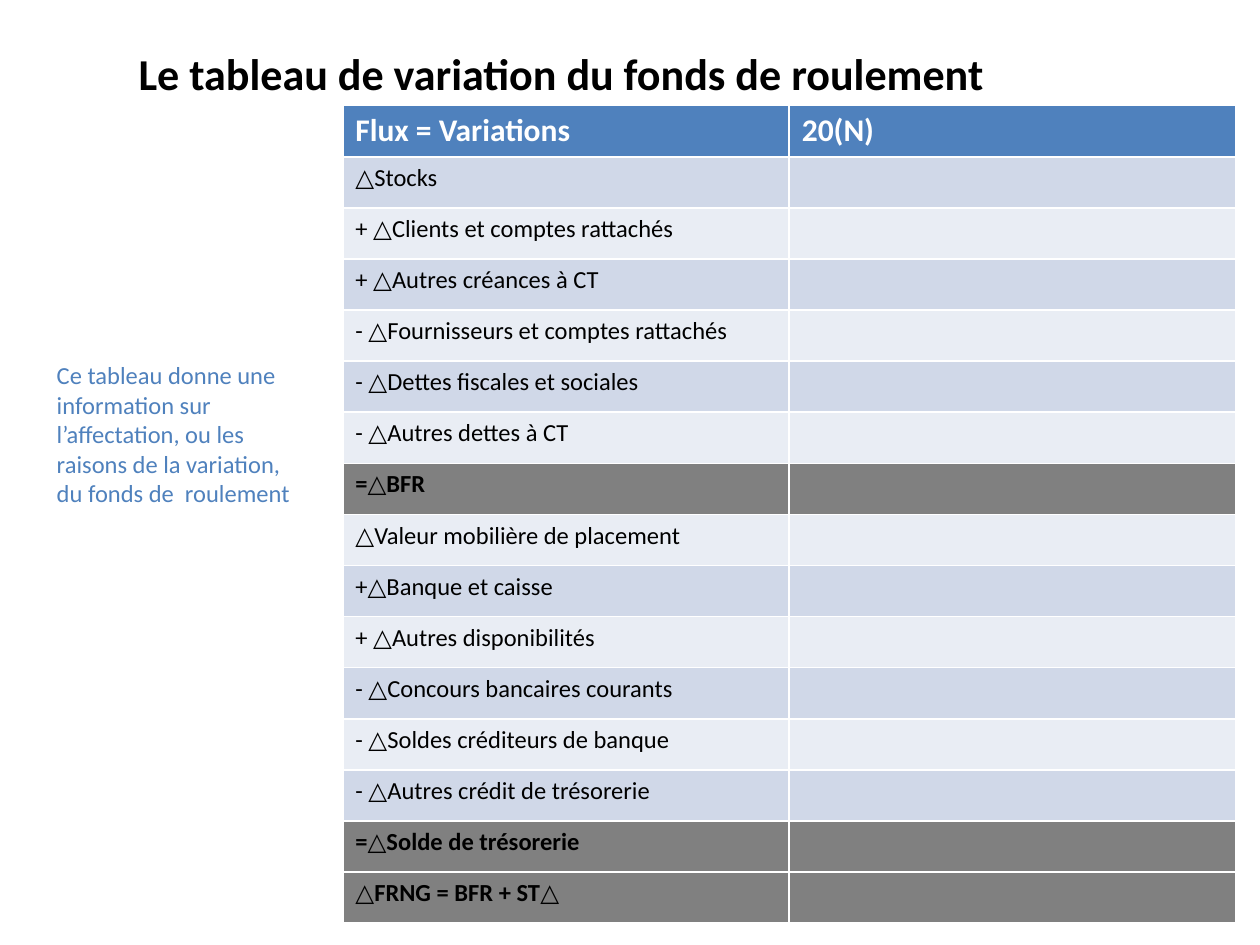
from pptx import Presentation
from pptx.dml.color import RGBColor
from pptx.enum.text import MSO_ANCHOR, MSO_AUTO_SIZE, PP_ALIGN
from pptx.util import Cm, Pt

COLORS = {
    "black": "000000",
    "white": "FFFFFF",
    "blue": "4F81BD",
    "band_dark": "D0D8E8",
    "band_light": "E9EDF4",
    "total": "808080",
}


def write(tf, text, size=14, color="black", bold=False):
    p = tf.paragraphs[0]
    p.alignment = PP_ALIGN.LEFT
    r = p.add_run()
    r.text = text
    r.font.name = "Calibri"
    r.font.size = Pt(size)
    r.font.bold = bold
    r.font.color.rgb = RGBColor.from_string(COLORS[color])


def place(sp, left, top, width, height, anchor):
    sp.left, sp.top, sp.width, sp.height = Cm(left), Cm(top), Cm(width), Cm(height)
    tf = sp.text_frame
    tf.word_wrap = True
    tf.auto_size = MSO_AUTO_SIZE.NONE
    tf.vertical_anchor = anchor
    return tf


prs = Presentation()
prs.slide_width, prs.slide_height = Cm(25.4), Cm(19.05)

# Content with Caption: title, content (replaced by the table) and caption
s = prs.slides.add_slide(prs.slide_layouts[7])
title, content, caption = s.placeholders
content.element.getparent().remove(content.element)

# Title
tf = place(title, 2.54, 0.76, 21.59, 1.37, MSO_ANCHOR.BOTTOM)
write(tf, "Le tableau de variation du fonds de roulement", size=25.2, bold=True)

# Table of flows: (label, is a total)
rows = [
    ("△Stocks", False),
    ("+ △Clients et comptes rattachés", False),
    ("+ △Autres créances à CT", False),
    ("- △Fournisseurs et comptes rattachés", False),
    ("- △Dettes fiscales et sociales", False),
    ("- △Autres dettes à CT", False),
    ("=△BFR", True),
    ("△Valeur mobilière de placement", False),
    ("+△Banque et caisse", False),
    ("+ △Autres disponibilités", False),
    ("- △Concours bancaires courants", False),
    ("- △Soldes créditeurs de banque", False),
    ("- △Autres crédit de trésorerie", False),
    ("=△Solde de trésorerie", True),
    ("△FRNG = BFR + ST△", True),
]
row_height = 1.03
n_rows = len(rows) + 1
table = s.shapes.add_table(
    n_rows, 2, Cm(6.91), Cm(2.13), Cm(18), Cm(row_height * n_rows)
).table
for row in table.rows:
    row.height = Cm(row_height)

# Header row
for cell, text in zip(table.rows[0].cells, ("Flux = Variations", "20(N)")):
    cell.fill.solid()
    cell.fill.fore_color.rgb = RGBColor.from_string(COLORS["blue"])
    write(cell.text_frame, text, size=18, color="white", bold=True)

# Banded rows, with the totals in grey
for i, (label, is_total) in enumerate(rows):
    band = "total" if is_total else ("band_dark", "band_light")[i % 2]
    cells = table.rows[i + 1].cells
    for cell in cells:
        cell.fill.solid()
        cell.fill.fore_color.rgb = RGBColor.from_string(COLORS[band])
    write(cells[0].text_frame, label, bold=is_total)

# Caption
tf = place(caption, 0.89, 7.14, 5.28, 9.68, MSO_ANCHOR.TOP)
write(
    tf,
    "Ce tableau donne une information sur l’affectation, ou les raisons "
    "de la variation, du fonds de  roulement",
    color="blue",
)

prs.save("out.pptx")
